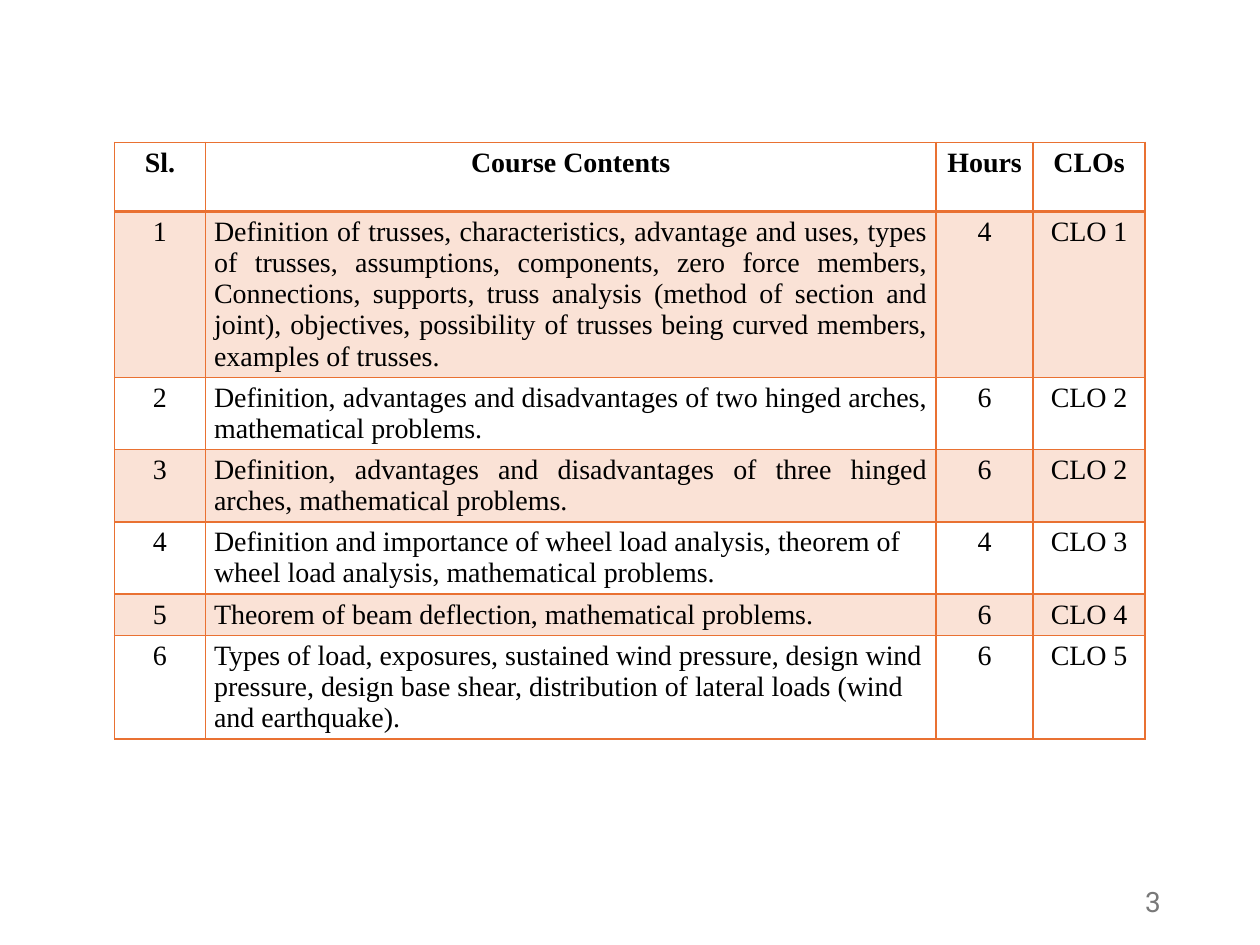
from dataclasses import dataclass

from lxml.etree import SubElement
from pptx import Presentation
from pptx.dml.color import RGBColor
from pptx.enum.text import MSO_ANCHOR, PP_ALIGN as Align
from pptx.oxml import parse_xml
from pptx.oxml.ns import nsdecls, qn
from pptx.util import Inches, Pt

# Content
HEADER = ("Sl.", "Course Contents", "Hours", "CLOs")
# (contents, alignment, hours, CLO, row height)
TOPICS = [
    ("Definition of trusses, characteristics, advantage and uses, types of trusses, "
     "assumptions, components, zero force members, Connections, supports, truss analysis "
     "(method of section and joint), objectives, possibility of trusses being curved "
     "members, examples of trusses.", Align.JUSTIFY, 4, 1, 1.31),
    ("Definition, advantages and disadvantages of two hinged arches, mathematical problems.",
     Align.JUSTIFY, 6, 2, 0.57),
    ("Definition, advantages and disadvantages of three hinged arches, mathematical problems.",
     Align.JUSTIFY, 6, 2, 0.57),
    ("Definition and importance of wheel load analysis, theorem of wheel load analysis, "
     "mathematical problems.", Align.LEFT, 4, 3, 0.57),
    ("Theorem of beam deflection, mathematical problems.", Align.LEFT, 6, 4, 0.33),
    ("Types of load, exposures, sustained wind pressure, design wind pressure, design base "
     "shear, distribution of lateral loads (wind and earthquake).", Align.LEFT, 6, 5, 0.82),
]
PAGE_NUMBER = "3"
COL_WIDTHS = (0.72, 5.8, 0.77, 0.89)
HEADER_HEIGHT = 0.55


@dataclass(frozen=True)
class Theme:
    accent: str = "E97132"
    text: str = "000000"
    muted: str = "797979"
    band_alpha: int = 20
    table_font: str = "Times New Roman"
    number_font: str = "Roboto"
    size: int = 16


THEME = Theme()


def style(p, font, color, align, bold=False):
    p.alignment = align
    p.font.name, p.font.size, p.font.bold = font, Pt(THEME.size), bold
    p.font.color.rgb = RGBColor.from_string(color)


def set_borders(cell, top, bottom):
    tc_pr = cell._tc.get_or_add_tcPr()
    sides = (("L", 1), ("R", 1), ("T", top), ("B", bottom))
    for i, (side, width) in enumerate(sides):
        tc_pr.insert(i, parse_xml(
            f'<a:ln{side} {nsdecls("a")} w="{Pt(width)}"><a:solidFill>'
            f'<a:srgbClr val="{THEME.accent}"/></a:solidFill></a:ln{side}>'))


def fill_cell(cell, banded):
    if not banded:
        cell.fill.background()
        return
    cell.fill.solid()
    cell.fill.fore_color.rgb = RGBColor.from_string(THEME.accent)
    color = cell._tc.tcPr.find(".//" + qn("a:srgbClr"))
    SubElement(color, qn("a:alpha"), val=str(THEME.band_alpha * 1000))


prs = Presentation()
prs.slide_width, prs.slide_height = Inches(10), Inches(7.5)
slide = prs.slides.add_slide(prs.slide_layouts[6])

# Course table
rows = [HEADER] + [(str(n), text, str(hours), f"CLO {clo}")
                   for n, (text, _, hours, clo, _) in enumerate(TOPICS, 1)]
heights = [HEADER_HEIGHT] + [topic[-1] for topic in TOPICS]
aligns = [Align.CENTER] + [topic[1] for topic in TOPICS]
table = slide.shapes.add_table(
    len(rows), len(HEADER), Inches(0.91), Inches(1.13),
    Inches(sum(COL_WIDTHS)), Inches(sum(heights))).table
table.first_row = table.horz_banding = False
for column, width in zip(table.columns, COL_WIDTHS):
    column.width = Inches(width)

for r, (row, height, content_align) in enumerate(zip(rows, heights, aligns)):
    table.rows[r].height = Inches(height)
    for c, text in enumerate(row):
        cell = table.cell(r, c)
        cell.margin_left = cell.margin_right = Inches(0.07)
        cell.margin_top = cell.margin_bottom = Inches(0.04)
        cell.text = text
        style(cell.text_frame.paragraphs[0], THEME.table_font, THEME.text,
              content_align if c == 1 else Align.CENTER, bold=r == 0)
        fill_cell(cell, banded=r % 2 == 1)
        set_borders(cell, top=2 if r == 1 else 1, bottom=2 if r == 0 else 1)

# Page number
tf = slide.shapes.add_textbox(Inches(7.06), Inches(6.95), Inches(2.25), Inches(0.4)).text_frame
tf.word_wrap = True
tf.vertical_anchor = MSO_ANCHOR.MIDDLE
tf.text = PAGE_NUMBER
style(tf.paragraphs[0], THEME.number_font, THEME.muted, Align.RIGHT)

prs.save("out.pptx")
